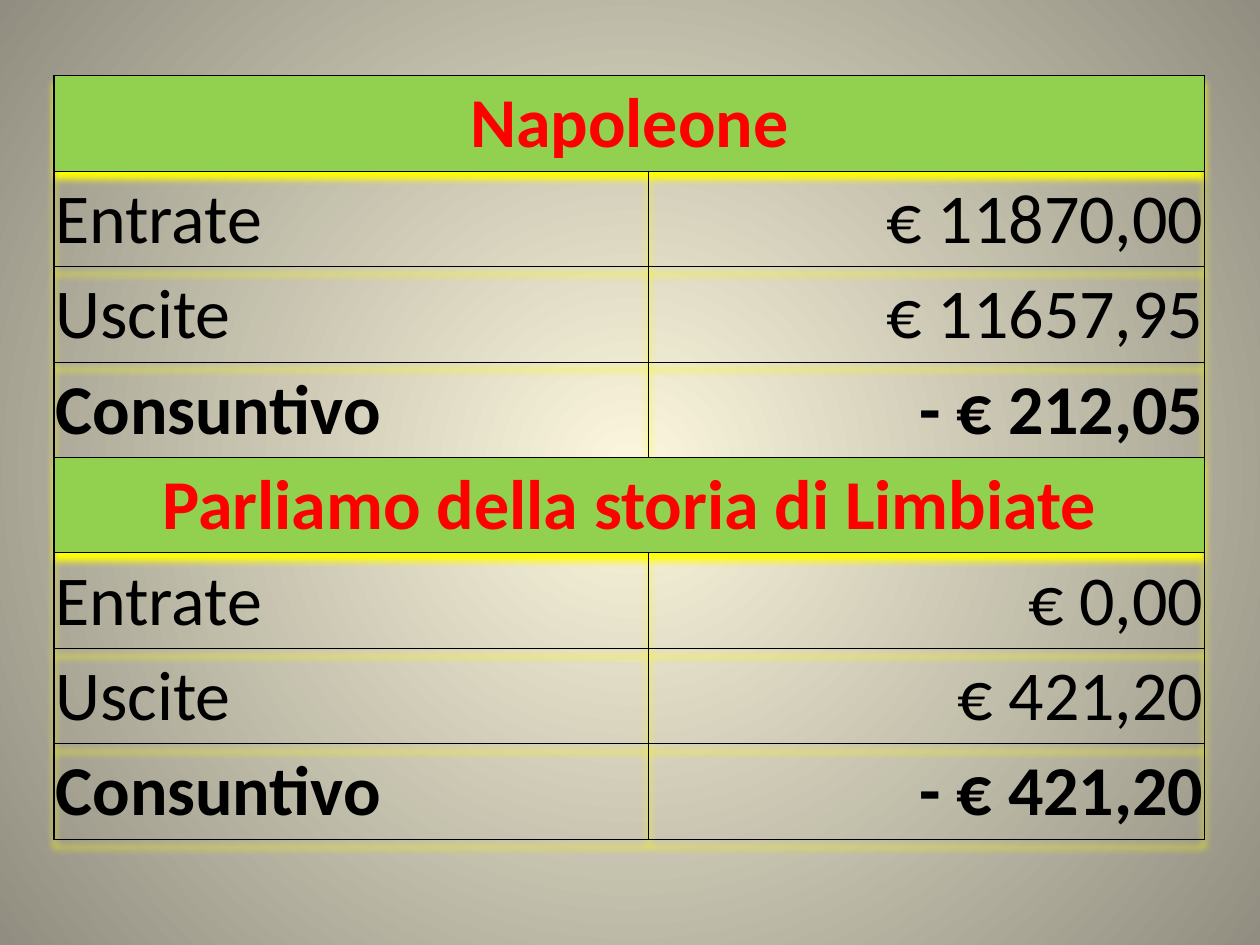
import pptx
import pptx.dml.color
import pptx.enum.text
import pptx.oxml
import pptx.oxml.ns
import pptx.util
from pptx.util import Inches

ALIGN = pptx.enum.text.PP_ALIGN
NAMESPACE = pptx.oxml.ns.nsdecls("a")


def color(value):
    """Turn a hex string into a colour."""
    return pptx.dml.color.RGBColor.from_string(value)


class BudgetSlide:
    """Hold the style and the current slide."""

    font = "Calibri"
    size = 40
    ink = "000000"
    accent = "FF0000"
    heading_fill = "92D050"
    glow = "FFFF00"

    def __init__(self, presentation):
        self.slide = presentation.slides.add_slide(presentation.slide_layouts[6])

    def background(self, center, edge):
        fill = self.slide.background.fill
        fill.gradient()
        for stop, value, position in zip(fill.gradient_stops, (center, edge), (0, 1)):
            stop.color.rgb = color(value)
            stop.position = position
        linear = self.slide.element.xpath(".//a:gradFill/a:lin")[0]
        linear.getparent().replace(linear, pptx.oxml.parse_xml(
            f'<a:path {NAMESPACE} path="circle">'
            '<a:fillToRect l="50000" t="50000" r="50000" b="50000"/></a:path>'))

    def borders(self, cell, widths):
        properties = cell._tc.get_or_add_tcPr()
        for index, (side, width) in enumerate(zip("LRTB", widths)):
            properties.insert(index, pptx.oxml.parse_xml(
                f'<a:ln{side} {NAMESPACE} w="{pptx.util.Pt(width)}"><a:solidFill>'
                f'<a:srgbClr val="{self.ink}"/></a:solidFill></a:ln{side}>'))

    def cell(self, cell, text, align, bold=False, heading=False):
        cell.margin_left = cell.margin_right = cell.margin_top = Inches(0.01)
        cell.margin_bottom = 0
        cell.vertical_anchor = pptx.enum.text.MSO_ANCHOR.MIDDLE
        if heading:
            cell.fill.solid()
            cell.fill.fore_color.rgb = color(self.heading_fill)
        else:
            cell.fill.background()
        paragraph = cell.text_frame.paragraphs[0]
        paragraph.text = text
        paragraph.alignment = align
        paragraph.font.name = self.font
        paragraph.font.size = pptx.util.Pt(self.size)
        paragraph.font.bold = bold
        paragraph.font.color.rgb = color(self.accent if heading else self.ink)

    def shadow(self, table):
        table._tbl.tblPr.insert(0, pptx.oxml.parse_xml(
            f'<a:effectLst {NAMESPACE}><a:outerShdw blurRad="{Inches(0.05)}" '
            f'dist="{Inches(0.06)}" dir="5400000" rotWithShape="0">'
            f'<a:srgbClr val="{self.glow}"/></a:outerShdw></a:effectLst>'))

    def table(self, left, top, widths, height, sections):
        rows = []
        for title, amounts in sections:
            rows.append((title, None))
            rows.extend(zip(("Entrate", "Uscite", "Consuntivo"), amounts))
        frame = self.slide.shapes.add_table(
            len(rows), len(widths), Inches(left), Inches(top),
            Inches(sum(widths)), Inches(height))
        table = frame.table
        table.first_row = table.horz_banding = False
        table._tbl.tblPr.find(pptx.oxml.ns.qn("a:tableStyleId")).text = (
            "{2D5ABB26-0587-4C30-8999-92F81FD0307C}")
        self.shadow(table)
        for column, width in zip(table.columns, widths):
            column.width = Inches(width)
        for index, (label, amount) in enumerate(rows):
            table.rows[index].height = Inches(height / len(rows))
            first, second = table.cell(index, 0), table.cell(index, 1)
            if amount is None:
                first.merge(second)
                self.cell(first, label, ALIGN.CENTER, bold=True, heading=True)
            else:
                bold = label == "Consuntivo"
                self.cell(first, label, ALIGN.LEFT, bold)
                self.cell(second, amount, ALIGN.RIGHT, bold)
            self.borders(first, (1, 0.5, 0.5 if index else 1, 0.5))
            self.borders(second, (0.5, 0.5, 0.5 if index else 1, 0.5))


def main():
    presentation = pptx.Presentation()
    presentation.slide_width = Inches(10)
    presentation.slide_height = Inches(7.5)
    budget = BudgetSlide(presentation)
    budget.background("FCF7DD", "918E81")
    budget.table(0.43, 0.6, (4.72, 4.41), 6.06, (
        ("Napoleone", ("€ 11870,00", "€ 11657,95", "- € 212,05")),
        ("Parliamo della storia di Limbiate", ("€ 0,00", "€ 421,20", "- € 421,20")),
    ))
    presentation.save("out.pptx")


if __name__ == "__main__":
    main()
